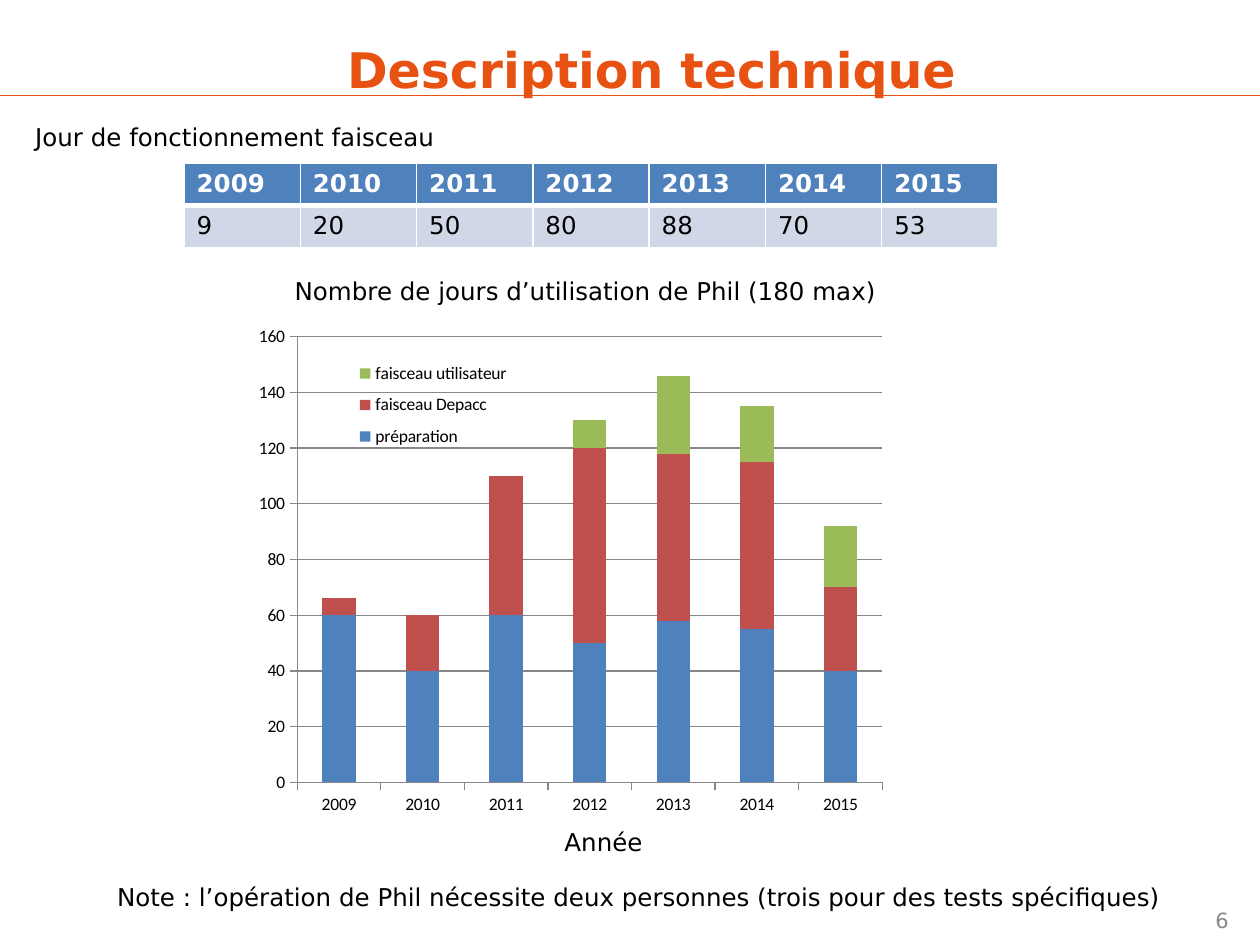
from dataclasses import dataclass

from lxml.etree import SubElement
from pptx import Presentation
from pptx.chart.data import CategoryChartData
from pptx.dml.color import RGBColor
from pptx.enum.chart import XL_CHART_TYPE as ChartType
from pptx.enum.chart import XL_LEGEND_POSITION as LegendPosition
from pptx.enum.chart import XL_TICK_MARK as TickMark
from pptx.enum.shapes import MSO_CONNECTOR as ConnectorType
from pptx.enum.text import MSO_ANCHOR as Anchor
from pptx.enum.text import MSO_AUTO_SIZE as AutoSize
from pptx.enum.text import PP_ALIGN as Align
from pptx.oxml import parse_xml
from pptx.oxml.ns import nsdecls, qn
from pptx.util import Cm, Pt


@dataclass(frozen=True)
class Theme:
    font: str = "DejaVu Sans"
    chart_font: str = "Calibri"
    accent: str = "E75112"
    text: str = "000000"
    light: str = "FFFFFF"
    muted: str = "898989"
    axis: str = "878787"
    header: str = "4F81BD"
    band: str = "D0D8E8"
    title_size: int = 28
    body_size: int = 14
    number_size: int = 12
    chart_size: int = 10


@dataclass(frozen=True)
class Box:
    left: float
    top: float
    width: float
    height: float

    def lengths(self) -> tuple:
        return Cm(self.left), Cm(self.top), Cm(self.width), Cm(self.height)


@dataclass(frozen=True)
class Label:
    text: str
    box: Box


@dataclass(frozen=True)
class Series:
    name: str
    values: tuple
    color: str


THEME = Theme()
YEARS = ("2009", "2010", "2011", "2012", "2013", "2014", "2015")
BEAM_DAYS = ("9", "20", "50", "80", "88", "70", "53")
SERIES = (
    Series("préparation", (60, 40, 60, 50, 58, 55, 40), "4F81BD"),
    Series("faisceau Depacc", (6, 20, 50, 70, 60, 60, 30), "C0504D"),
    Series("faisceau utilisateur", (None, None, None, 10, 28, 20, 22), "9BBB59"),
)
TABLE_LABEL = Label("Jour de fonctionnement faisceau", Box(0.46, 2.34, 8.66, 0.86))
CHART_LABELS = (
    Label("Nombre de jours d’utilisation de Phil (180 max)", Box(5.69, 5.44, 12.45, 0.86)),
    Label("Année", Box(11.13, 16.54, 2.08, 0.86)),
    Label(
        "Note : l’opération de Phil nécessite deux personnes (trois pour des tests spécifiques)",
        Box(2.11, 17.65, 21.79, 0.86),
    ),
)


def style_text(text_frame, size: int, color: str, bold: bool = False, align=Align.LEFT) -> None:
    for paragraph in text_frame.paragraphs:
        paragraph.alignment = align
        for run in paragraph.runs:
            run.font.name = THEME.font
            run.font.size = Pt(size)
            run.font.bold = bold
            run.font.color.rgb = RGBColor.from_string(color)


def add_title(slide, text: str, box: Box) -> None:
    title = slide.shapes.title
    title.left, title.top, title.width, title.height = box.lengths()
    title.text_frame.text = text
    title.text_frame.vertical_anchor = Anchor.MIDDLE
    style_text(title.text_frame, THEME.title_size, THEME.accent, True, Align.CENTER)


def add_label(slide, label: Label) -> None:
    shape = slide.shapes.add_textbox(*label.box.lengths())
    shape.text_frame.text = label.text
    shape.text_frame.word_wrap = False
    shape.text_frame.auto_size = AutoSize.SHAPE_TO_FIT_TEXT
    style_text(shape.text_frame, THEME.body_size, THEME.text)


def add_page_number(slide, text: str, box: Box) -> None:
    shape = slide.shapes.add_textbox(*box.lengths())
    shape.text_frame.text = text
    shape.text_frame.word_wrap = True
    shape.text_frame.vertical_anchor = Anchor.MIDDLE
    style_text(shape.text_frame, THEME.number_size, THEME.muted, align=Align.RIGHT)


def add_rule(slide, top: float, width: float) -> None:
    rule = slide.shapes.add_connector(ConnectorType.STRAIGHT, 0, Cm(top), Cm(width), Cm(top))
    rule.line.color.rgb = RGBColor.from_string(THEME.accent)
    rule.line.width = Pt(0.75)
    SubElement(rule._element.spPr, qn("a:effectLst"))


def set_borders(cell, widths: dict) -> None:
    properties = cell._tc.get_or_add_tcPr()
    for index, (side, width) in enumerate(widths.items()):
        border = parse_xml(
            f'<a:ln{side} {nsdecls("a")} w="{Pt(width)}"><a:solidFill>'
            f'<a:srgbClr val="{THEME.light}"/></a:solidFill></a:ln{side}>'
        )
        properties.insert(index, border)


def add_year_table(slide, box: Box) -> None:
    rows = (
        (YEARS, THEME.header, THEME.light, True, {"L": 1, "R": 1, "T": 1, "B": 3}),
        (BEAM_DAYS, THEME.band, THEME.text, False, {"L": 1, "R": 1, "T": 3, "B": 1}),
    )
    table = slide.shapes.add_table(len(rows), len(YEARS), *box.lengths()).table
    for row, (texts, fill, color, bold, borders) in enumerate(rows):
        for column, text in enumerate(texts):
            cell = table.cell(row, column)
            cell.text_frame.text = text
            cell.fill.solid()
            cell.fill.fore_color.rgb = RGBColor.from_string(fill)
            style_text(cell.text_frame, THEME.body_size, color, bold)
            set_borders(cell, borders)


def set_layout(element, box: Box, inner: bool = False) -> None:
    for layout in element.findall(qn("c:layout")):
        element.remove(layout)
    target = '<c:layoutTarget val="inner"/>' if inner else ""
    layout = parse_xml(
        f'<c:layout {nsdecls("c")}><c:manualLayout>{target}'
        '<c:xMode val="edge"/><c:yMode val="edge"/>'
        f'<c:x val="{box.left}"/><c:y val="{box.top}"/>'
        f'<c:w val="{box.width}"/><c:h val="{box.height}"/></c:manualLayout></c:layout>'
    )
    element.insert(1 if element.tag == qn("c:legend") else 0, layout)


def add_usage_chart(slide, box: Box) -> None:
    data = CategoryChartData()
    data.categories = YEARS
    for series in SERIES:
        data.add_series(series.name, series.values)
    chart = slide.shapes.add_chart(ChartType.COLUMN_STACKED, *box.lengths(), data).chart
    chart.has_title = False
    chart.font.name = THEME.chart_font
    chart.font.size = Pt(THEME.chart_size)
    chart.font.color.rgb = RGBColor.from_string(THEME.text)
    plot = chart.plots[0]
    plot.vary_by_categories = False
    plot.gap_width = 150
    plot.overlap = 100
    for drawn, series in zip(plot.series, SERIES):
        drawn.format.fill.solid()
        drawn.format.fill.fore_color.rgb = RGBColor.from_string(series.color)
    chart.value_axis.has_major_gridlines = True
    chart.value_axis.minimum_scale = 0
    chart.value_axis.maximum_scale = 160
    chart.value_axis.major_unit = 20
    for axis in (chart.category_axis, chart.value_axis):
        axis.major_tick_mark = TickMark.OUTSIDE
    for part in (chart.category_axis, chart.value_axis, chart.value_axis.major_gridlines):
        part.format.line.color.rgb = RGBColor.from_string(THEME.axis)
        part.format.line.width = Pt(0.75)
    chart.has_legend = True
    chart.legend.position = LegendPosition.RIGHT
    chart.legend.include_in_layout = False
    set_layout(chart.legend._element, Box(0.11, 0.07, 0.25, 0.21))
    set_layout(chart._chartSpace.chart.plotArea, Box(0.07, 0.04, 0.71, 0.88), True)


def main() -> None:
    presentation = Presentation()
    presentation.slide_width, presentation.slide_height = Cm(25.4), Cm(19.05)
    slide = presentation.slides.add_slide(presentation.slide_layouts[5])
    add_page_number(slide, "6", Box(19.1, 18.03, 5.92, 1.02))
    add_rule(slide, 1.93, 25.4)
    add_title(slide, "Description technique", Box(0.43, 0.43, 25.4, 1.93))
    add_label(slide, TABLE_LABEL)
    add_year_table(slide, Box(3.71, 3.3, 16.41, 1.64))
    add_usage_chart(slide, Box(4.83, 6.38, 16.61, 10.21))
    for label in CHART_LABELS:
        add_label(slide, label)
    presentation.save("out.pptx")


if __name__ == "__main__":
    main()
